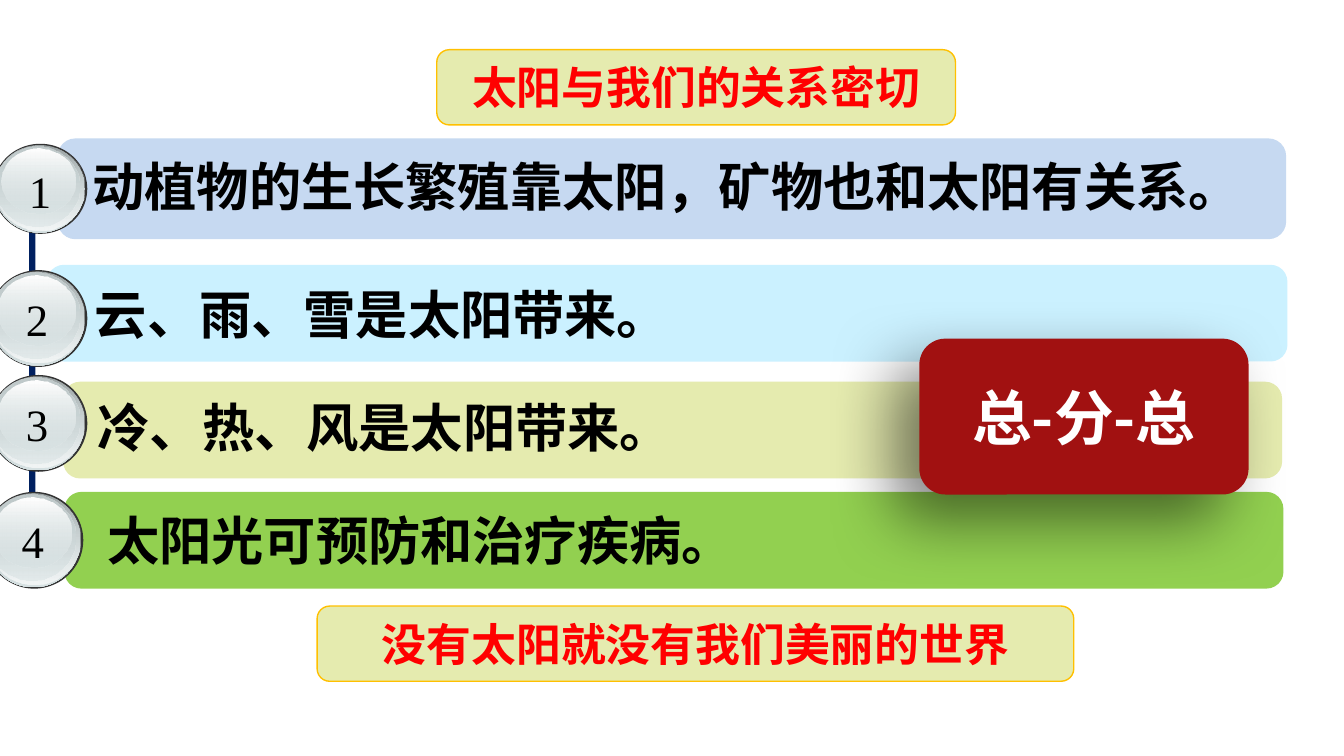
"""Build a slide with four numbered points on the sun, framed by two claims."""
from lxml import etree
from pptx import Presentation
from pptx.dml.color import RGBColor
from pptx.enum import shapes, text
from pptx.oxml import ns
from pptx.util import Inches, Pt

SANS = "Noto Sans CJK SC"
SERIF = "Times New Roman"
KIND = shapes.MSO_SHAPE
CENTER = text.PP_ALIGN.CENTER


def shape(home, kind, box, fill=None, edge=None, width=0.75):
    item = home.add_shape(kind, *map(Inches, box))
    item.shadow.inherit = False
    if fill:
        item.fill.solid()
        item.fill.fore_color.rgb = RGBColor.from_string(fill)
    else:
        item.fill.background()
    if edge:
        item.line.color.rgb = RGBColor.from_string(edge)
        item.line.width = Pt(width)
    else:
        item.line.fill.background()
    return item


def write(item, words, size, color, face=SANS, align=CENTER, wrap=True,
          anchor=text.MSO_ANCHOR.TOP):
    frame = item.text_frame
    frame.word_wrap = wrap
    frame.vertical_anchor = anchor
    para = frame.paragraphs[0]
    para.text = words
    para.alignment = align
    font = para.font
    font.size, font.bold, font.name = Pt(size), face == SANS, face
    font.color.rgb = RGBColor.from_string(color)
    props = para._p.pPr.find(ns.qn("a:defRPr"))
    etree.SubElement(props, ns.qn("a:ea"), typeface=face)


deck = Presentation()
deck.slide_width = Inches(10)
deck.slide_height = deck.slide_width * 9 // 16
slide = deck.slides.add_slide(deck.slide_layouts[6])
tree = slide.shapes

shape(tree, KIND.LEFT_BRACE, (0.12, 1.42, 0.24, 2.36), None, "002060", 3.25)

rows = [
    ((0.43, 1.03, 9.14, 0.75), "C6D9F1", (0.59, 1.1, 8.81, 0.57),
     "动植物的生长繁殖靠太阳，矿物也和太阳有关系。", (-0.05, 1.07, 0.7, 0.67)),
    ((0.35, 1.97, 9.23, 0.72), "CBF1FF", (0.52, 2.05, 6.32, 0.57),
     " 云、雨、雪是太阳带来。", (-0.08, 2.01, 0.73, 0.72)),
    ((0.47, 2.84, 9.07, 0.72), "E5EBAF", (0.54, 2.89, 8.11, 0.57),
     " 冷、热、风是太阳带来。", (-0.08, 2.79, 0.73, 0.72)),
    ((0.48, 3.66, 9.07, 0.72), "92D050", (0.7, 3.73, 8.58, 0.57),
     "太阳光可预防和治疗疾病。", (-0.11, 3.66, 0.73, 0.72)),
]
gloss = [
    ((0.01, 0.01, 0.7, 0.7), ("99A1A2", 100), ("D6E1E2", 100)),
    ((0.02, 0.01, 0.69, 0.68), ("D6E1E2", 0), ("F2F5F5", 100)),
    ((0.02, 0.02, 0.65, 0.64), ("C1CBCC", 100), ("D6E1E2", 48)),
    ((0.06, 0.04, 0.58, 0.52), ("FFFFFF", 100), ("D6E1E2", 38)),
]
for num, (bar, fill, area, words, badge) in enumerate(rows, 1):
    shape(tree, KIND.ROUNDED_RECTANGLE, bar, fill).adjustments[0] = 0.175
    label = tree.add_textbox(*map(Inches, area))
    write(label, words, 28, "000000", align=text.PP_ALIGN.LEFT)

    left, top, wide, high = badge
    across, down = wide / 0.73, high / 0.72
    group = tree.add_group_shape().shapes
    shape(group, KIND.OVAL, badge, "333333")
    for (x, y, w, h), *ends in gloss:
        box = left + x * across, top + y * down, w * across, h * down
        disc = shape(group, KIND.OVAL, box)
        disc.fill.gradient()
        disc.fill.gradient_angle = 270
        for stop, (color, _) in zip(disc.fill.gradient_stops, ends):
            stop.color.rgb = RGBColor.from_string(color)
        tints = disc._element.spPr.iter(ns.qn("a:srgbClr"))
        for tint, (_, alpha) in zip(list(tints), ends):
            etree.SubElement(tint, ns.qn("a:alpha"), val=str(alpha * 1000))
    spot = left + 0.17 * across, top + 0.11 * down, 0.37, 0.5
    digit = group.add_textbox(*map(Inches, spot))
    write(digit, str(num), 24, "000000", SERIF, wrap=False)

card = shape(tree, KIND.ROUNDED_RECTANGLE, (6.84, 2.52, 2.45, 1.16), "A11111")
write(card, "总-分-总", 32, "FFFFFF", anchor=text.MSO_ANCHOR.MIDDLE)
glow = etree.SubElement(
    card._element.spPr.find(ns.qn("a:effectLst")), ns.qn("a:outerShdw"),
    blurRad=str(Pt(35)), dist=str(Pt(20)), dir=str(135 * 60000))
shade = etree.SubElement(glow, ns.qn("a:srgbClr"), val="000000")
etree.SubElement(shade, ns.qn("a:alpha"), val="50000")

for box, words in [((3.25, 0.37, 3.86, 0.56), "太阳与我们的关系密切"),
                   ((2.36, 4.51, 5.63, 0.56), "没有太阳就没有我们美丽的世界")]:
    claim = shape(tree, KIND.ROUNDED_RECTANGLE, box, "E5EBAF", "FFC000")
    write(claim, words, 24, "FF0000")

deck.save("out.pptx")
